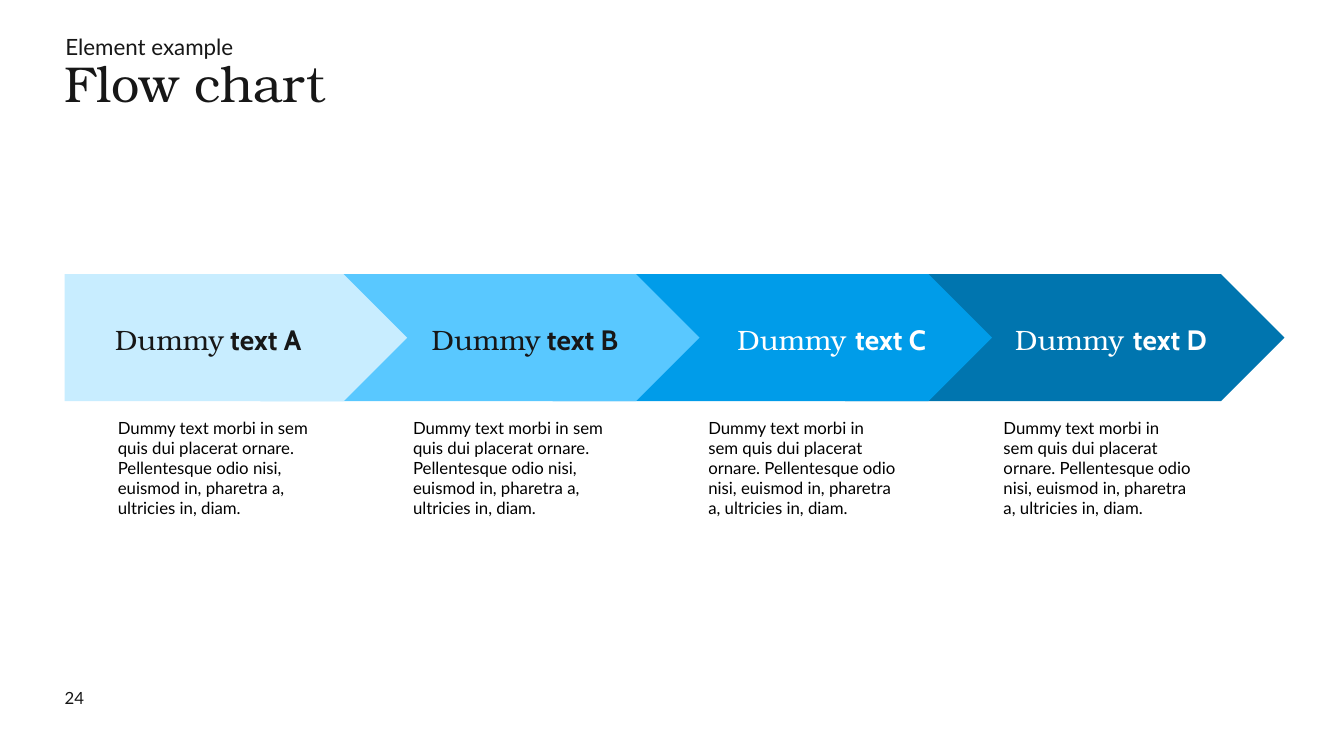
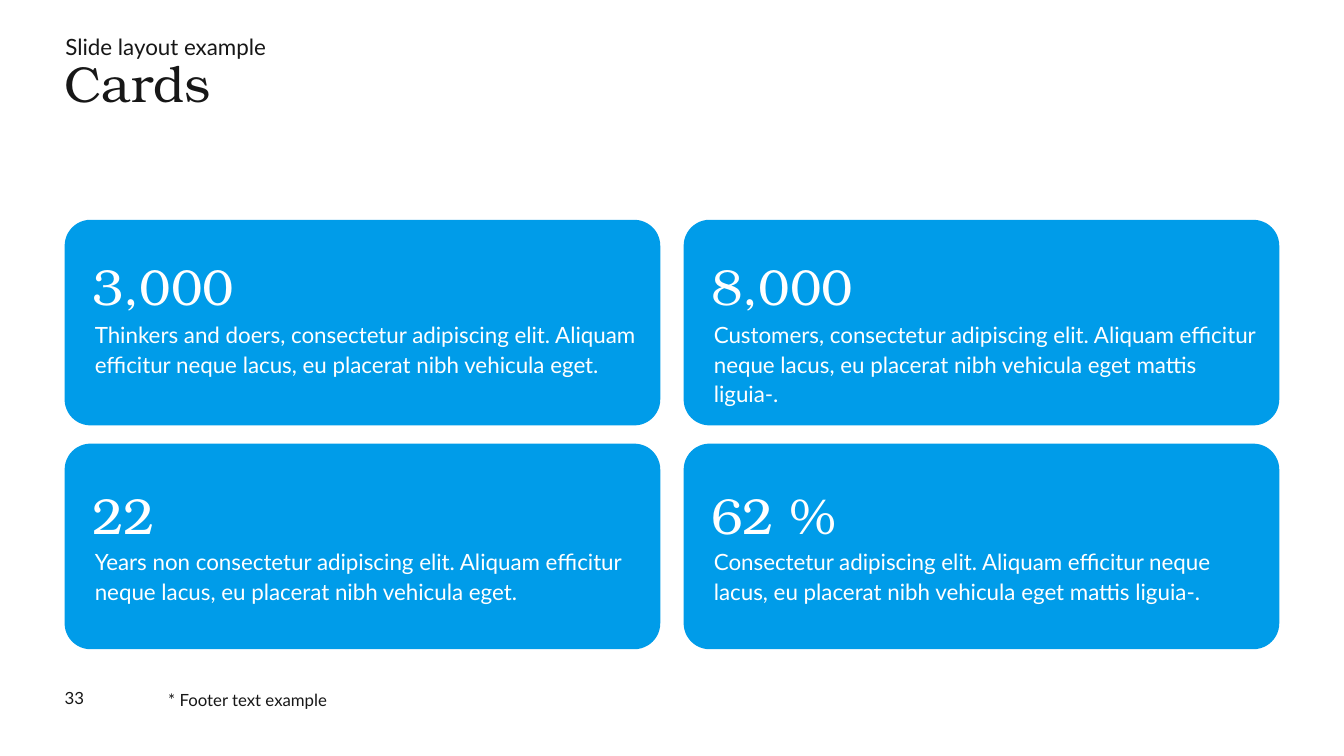
import pptx
import pptx.dml.color
import pptx.enum.shapes
import pptx.enum.text
import pptx.util

Cm = pptx.util.Cm
Pt = pptx.util.Pt
Shape = pptx.enum.shapes.MSO_SHAPE
Align = pptx.enum.text.PP_ALIGN

# Shared style
COLORS = {
    "ink": "171717",
    "black": "000000",
    "white": "FFFFFF",
    "ice": "C8EDFF",
    "sky": "59C8FF",
    "blue": "009CE9",
    "deep": "0075AF",
}
SERIF, SANS, BOLD_SANS = "TeX Gyre Bonum", "Lato", "Cabin"
MARGIN = 1.63
CONTENT_WIDTH = 30.6
INSETS = (0.25, 0.13)

# Content: lengths are centimetres
STEP_TEXT = ("Dummy text morbi in sem quis dui placerat ornare. Pellentesque "
             "odio nisi, euismod in, pharetra a, ultricies in, diam.")
STEPS = [  # serif part, bold part, fill, label colour, label centre, text width
    ("Dummy", " text A", "ice", "ink", 5.25, 5.69),
    ("Dummy", " text B", "sky", "ink", 13.23, 5.69),
    ("Dummy ", "text C", "blue", "white", 20.96, 5.25),
    ("Dummy ", "text D", "deep", "white", 28.0, 5.25),
]
CARDS = [
    ("3,000", "Thinkers and doers, consectetur adipiscing elit. Aliquam "
              "efficitur neque lacus, eu placerat nibh vehicula eget."),
    ("8,000", "Customers, consectetur adipiscing elit. Aliquam efficitur "
              "neque lacus, eu placerat nibh vehicula eget mattis liguia-."),
    ("22", "Years non consectetur adipiscing elit. Aliquam efficitur "
           "neque lacus, eu placerat nibh vehicula eget."),
    ("62 %", "Consectetur adipiscing elit. Aliquam efficitur neque lacus, "
             "eu placerat nibh vehicula eget mattis liguia-."),
]


def color(name):
    return pptx.dml.color.RGBColor.from_string(COLORS[name])


def add_text(page, place, text, size, fill="ink", font=SANS,
             insets=(0, 0), spacing=None, wrap=True):
    """Add a one-paragraph text box and return its paragraph."""
    box = page.shapes.add_textbox(*map(Cm, place))
    frame = box.text_frame
    frame.word_wrap = wrap
    frame.margin_left = frame.margin_right = Cm(insets[0])
    frame.margin_top = frame.margin_bottom = Cm(insets[1])
    para = frame.paragraphs[0]
    para.text = text
    para.font.name = font
    para.font.size = Pt(size)
    para.font.color.rgb = color(fill)
    if spacing:
        para.line_spacing = spacing
    return para


def add_panel(page, kind, place, fill):
    panel = page.shapes.add_shape(kind, *map(Cm, place))
    panel.shadow.inherit = False
    panel.fill.solid()
    panel.fill.fore_color.rgb = color(fill)
    panel.line.fill.background()
    return panel


def add_page(deck, kicker, title, number):
    """Start a slide with its heading and page number."""
    page = deck.slides.add_slide(deck.slide_layouts[6])
    add_text(page, (MARGIN + 0.02, 0.76, CONTENT_WIDTH, 0.56), kicker, 16,
             spacing=1.1)
    add_text(page, (MARGIN, 1.32, CONTENT_WIDTH, 2.41), title, 36,
             font=SERIF, spacing=Pt(43.2))
    add_text(page, (MARGIN, 17.32, 2.59, 0.51), number, 12)
    return page


def build_flow(deck):
    page = add_page(deck, "Element example", "Flow chart", "24")
    first_tip, tip_pitch, arrow_width = 10.26, 7.37, 11.07

    # Overlapping arrows, last one at the back
    for index in reversed(range(len(STEPS))):
        tip = first_tip + index * tip_pitch
        left = max(MARGIN, tip - arrow_width)
        add_panel(page, Shape.PENTAGON, (left, 6.91, tip - left, 3.2),
                  STEPS[index][2])

    # Labels and descriptions
    label_width = 4.95
    for index, (serif, bold, _, ink, center, width) in enumerate(STEPS):
        para = add_text(page, (center - label_width / 2, 8.13, label_width, 0.86),
                        serif, 20, ink, SERIF, wrap=False)
        para.alignment = Align.CENTER
        span = para.add_run()
        span.text = bold
        span.font.name = BOLD_SANS
        span.font.bold = True
        add_text(page, (2.72 + index * 7.44, 10.39, width, 2.82), STEP_TEXT,
                 12, "black", insets=INSETS)


def build_cards(deck):
    page = add_page(deck, "Slide layout example", "Cards", "33")
    add_text(page, (4.24, 17.32, 22.81, 0.51), "* Footer text example", 12,
             spacing=1.1)

    card_width, card_height, column_gap, row_gap = 15.01, 5.18, 0.59, 0.46
    text_tops = [(0.89, 2.36), (1.02, 2.44)]  # number and text, per row
    for index, (number, text) in enumerate(CARDS):
        row, column = divmod(index, 2)
        left = MARGIN + column * (card_width + column_gap)
        top = 5.54 + row * (card_height + row_gap)
        number_top, text_top = text_tops[row]
        card = add_panel(page, Shape.ROUNDED_RECTANGLE,
                         (left, top, card_width, card_height), "blue")
        card.adjustments[0] = 0.126
        add_text(page, (left + 0.7, top + number_top, 3.6, 1.55), number, 36,
                 "white", SERIF, wrap=False)
        add_text(page, (left + 0.51, top + text_top, 14.38, 2.26), text, 16,
                 "white", insets=INSETS, spacing=1.1)


def main():
    deck = pptx.Presentation()
    deck.slide_width, deck.slide_height = Cm(33.87), Cm(19.05)
    build_flow(deck)
    build_cards(deck)
    deck.save("out.pptx")


if __name__ == "__main__":
    main()
